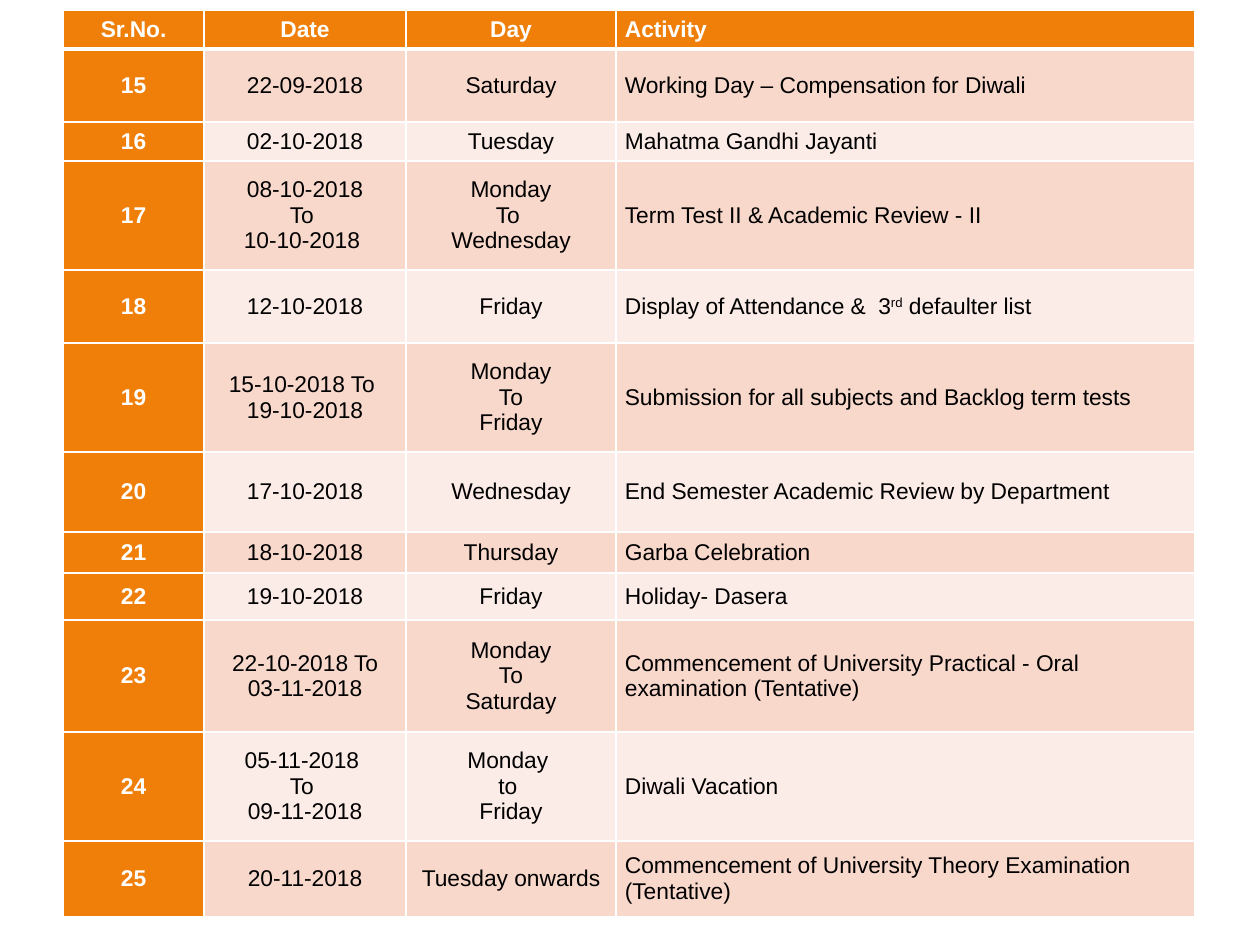
from lxml import etree
from pptx import Presentation
from pptx import util as u
from pptx.dml.color import RGBColor
from pptx.enum import text
from pptx.oxml import ns

PX = 914400 // 126
FONT = "Arial"
ORANGE = RGBColor(0xF0, 0x7F, 0x09)
BAND_DARK = RGBColor(0xF9, 0xD8, 0xCC)
BAND_LIGHT = RGBColor(0xFC, 0xEC, 0xE7)
WHITE = RGBColor(0xFF, 0xFF, 0xFF)
BLACK = RGBColor(0x00, 0x00, 0x00)

LEFT, TOP = 63, 10
COLUMN_WIDTHS = [141, 202, 210, 579]
ROW_HEIGHTS = [39, 73, 39, 109, 73, 109, 80, 41, 47, 112, 109, 76]
SIDE_MARGIN = 9
ACTIVITY_COLUMN = 3

# A line break starts a paragraph; text between carets is superscript.
SCHEDULE = [
    ("Sr.No.", "Date", "Day", "Activity"),
    ("15", "22-09-2018", "Saturday", "Working Day – Compensation for Diwali"),
    ("16", "02-10-2018", "Tuesday", "Mahatma Gandhi Jayanti"),
    ("17", "08-10-2018\nTo \n10-10-2018 ", "Monday\nTo \nWednesday",
     "Term Test II & Academic Review - II"),
    ("18", "12-10-2018", "Friday", "Display of Attendance &  3^rd^ defaulter list"),
    ("19", "15-10-2018 To \n19-10-2018", "Monday\nTo\nFriday",
     "Submission for all subjects and Backlog term tests"),
    ("20", "17-10-2018", "Wednesday", "End Semester Academic Review by Department"),
    ("21", "18-10-2018", "Thursday", "Garba Celebration"),
    ("22", "19-10-2018", "Friday", "Holiday- Dasera"),
    ("23", "22-10-2018 To\n03-11-2018", "Monday\nTo\nSaturday",
     "Commencement of University Practical - Oral examination (Tentative)"),
    ("24", "05-11-2018 \nTo \n09-11-2018", "Monday \nto \nFriday", "Diwali Vacation"),
    ("25", "20-11-2018", "Tuesday onwards",
     "Commencement of University Theory Examination (Tentative)"),
]


def px(length):
    return u.Emu(length * PX)


def write_text(frame, wording, size=13, color=BLACK, bold=False,
               align=text.PP_ALIGN.CENTER):
    for number, line in enumerate(wording.split("\n")):
        paragraph = frame.add_paragraph() if number else frame.paragraphs[0]
        paragraph.alignment = align
        for part, words in enumerate(line.split("^")):
            run = paragraph.add_run()
            run.text = words
            run.font.name = FONT
            run.font.size = u.Pt(size)
            run.font.bold = bold
            run.font.color.rgb = color
            if part % 2:
                run.font._element.set("baseline", "30000")


def set_borders(cell, top=1, bottom=1):
    """Draw white cell borders; call before the fill, which must follow them."""
    properties = cell._tc.get_or_add_tcPr()
    for side, points in (("L", 1), ("R", 1), ("T", top), ("B", bottom)):
        line = etree.SubElement(properties, ns.qn(f"a:ln{side}"), w=str(u.Pt(points)))
        fill = etree.SubElement(line, ns.qn("a:solidFill"))
        etree.SubElement(fill, ns.qn("a:srgbClr"), val=str(WHITE))


def format_cell(cell, row, column):
    cell.margin_left = cell.margin_right = px(SIDE_MARGIN)
    cell.margin_top = cell.margin_bottom = 0
    cell.vertical_anchor = text.MSO_ANCHOR.MIDDLE
    set_borders(cell, top=3 if row == 1 else 1, bottom=3 if row == 0 else 1)
    heading = row == 0 or column == 0
    cell.fill.solid()
    cell.fill.fore_color.rgb = (
        ORANGE if heading else BAND_DARK if row % 2 else BAND_LIGHT)
    write_text(
        cell.text_frame, SCHEDULE[row][column],
        color=WHITE if heading else BLACK, bold=heading,
        align=(text.PP_ALIGN.LEFT if column == ACTIVITY_COLUMN
               else text.PP_ALIGN.CENTER))


def add_schedule(slide):
    schedule = slide.shapes.add_table(
        len(ROW_HEIGHTS), len(COLUMN_WIDTHS), px(LEFT), px(TOP),
        px(sum(COLUMN_WIDTHS)), px(sum(ROW_HEIGHTS))).table
    for column, width in zip(schedule.columns, COLUMN_WIDTHS):
        column.width = px(width)
    for row, height in zip(schedule.rows, ROW_HEIGHTS):
        row.height = px(height)
    for row in range(len(ROW_HEIGHTS)):
        for column in range(len(COLUMN_WIDTHS)):
            format_cell(schedule.cell(row, column), row, column)


def main():
    deck = Presentation()
    deck.slide_width, deck.slide_height = px(1260), px(945)
    slide = deck.slides.add_slide(deck.slide_layouts[6])
    add_schedule(slide)
    deck.save("out.pptx")


if __name__ == "__main__":
    main()
